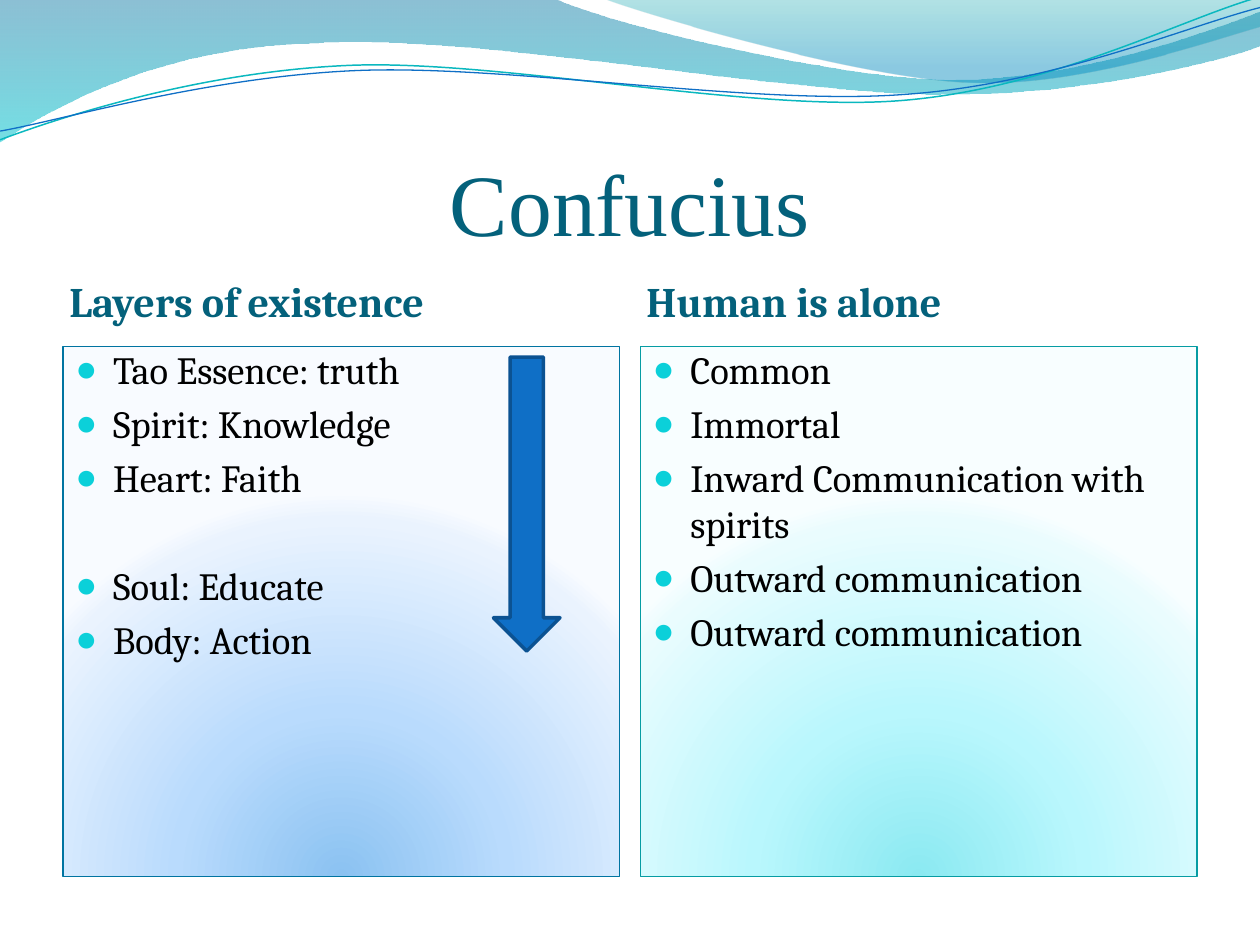
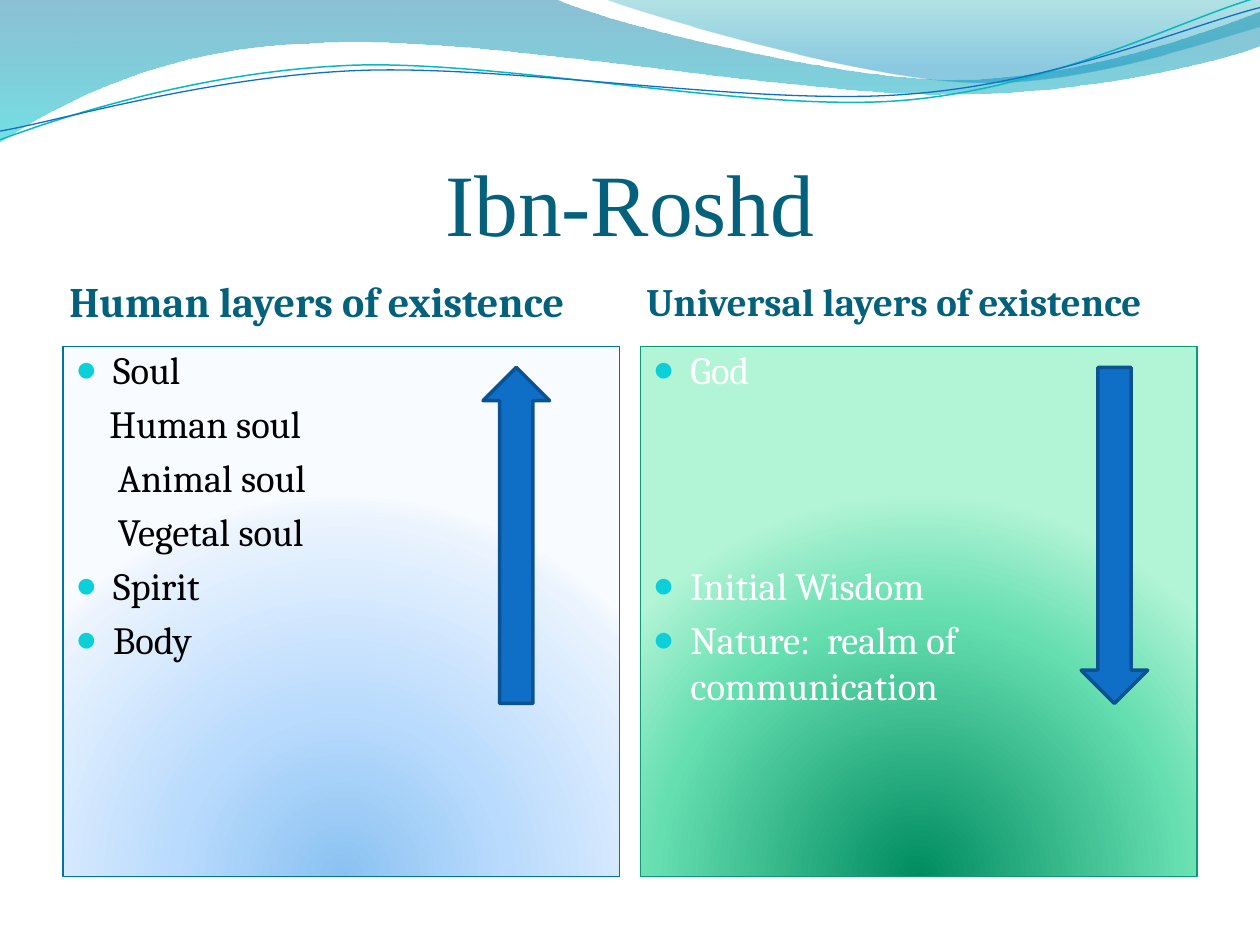
from dataclasses import dataclass
from typing import NamedTuple

from lxml.etree import SubElement
from pptx import Presentation
from pptx.dml.color import RGBColor
from pptx.enum.shapes import MSO_SHAPE
from pptx.enum.text import MSO_ANCHOR, PP_ALIGN
from pptx.oxml.ns import qn
from pptx.util import Pt


@dataclass(frozen=True)
class Theme:
    title_font: str = "Times New Roman"
    font: str = "Cambria"
    ink: str = "04617B"
    black: str = "000000"
    white: str = "FFFFFF"
    bullet: str = "0BD0D9"
    arrow: str = "0F6FC6"
    edge: str = "0B5292"
    title: float = 50
    head: float = 24
    small: float = 22.2
    body: float = 22


class Item(NamedTuple):
    text: str
    skip: int = 0
    inset: float = 0


class Arrow(NamedTuple):
    kind: MSO_SHAPE
    left: float
    top: float
    height: float


class Look(NamedTuple):
    stops: list
    line: str
    ink: str


class Panel(NamedTuple):
    head: str
    size: float
    look: Look
    items: list
    arrow: Arrow = None


T = Theme()
BLUE = Look([(0, "8BC2F1"), (43, "B9DBFD"), (93, "EAF3FE"), (100, "F8FBFF")], "0074A1", T.black)
AQUA = Look([(0, "8BE9F1"), (43, "B9F7FD"), (93, "EAFCFE"), (100, "F8FEFF")], "069CA3", T.black)
GREEN = Look([(0, "008C60"), (68, "65DEB0"), (100, "B2F4D6")], "0A9B74", T.white)

SLIDES = [
    ("Confucius", [
        Panel("Layers of existence", T.head, BLUE, [
            Item("Tao Essence: truth"),
            Item("Spirit: Knowledge"),
            Item("Heart: Faith"),
            Item("Soul: Educate", skip=1),
            Item("Body: Action"),
        ], Arrow(MSO_SHAPE.DOWN_ARROW, 246, 6, 168)),
        Panel("Human is alone", T.head, AQUA, [
            Item("Common"),
            Item("Immortal"),
            Item("Inward Communication with spirits"),
            Item("Outward communication"),
            Item("Outward communication"),
        ]),
    ]),
    ("Ibn-Roshd", [
        Panel("Human layers of existence", T.head, BLUE, [
            Item("Soul"),
            Item("Human soul", inset=19.4),
            Item("Animal soul", inset=24.2),
            Item("Vegetal soul", inset=24.2),
            Item("Spirit"),
            Item("Body"),
        ], Arrow(MSO_SHAPE.UP_ARROW, 240, 12, 192)),
        Panel("Universal layers of existence", T.small, GREEN, [
            Item("God"),
            Item("Initial Wisdom", skip=3),
            Item("Nature:  realm of communication"),
        ], Arrow(MSO_SHAPE.DOWN_ARROW, 252, 12, 192)),
    ]),
]

BANDS = [
    ([(0, "0074A1", 45), (100, "00C6CF", 55)], [
        (-0.7, 0), (317, -0.7),
        (342.7, 12.2, 478.1, 45.4, 545.8, 45.4),
        (614.2, 45.4, 689.8, 18.7, 720, 6.5),
        (720.7, 25.9),
        (707.8, 31.7, 626.4, 54.7, 537.1, 54),
        (447.8, 54, 275, 20.2, 185, 24.5),
        (92.9, 25.9, 33.1, 59.8, -0.7, 81.4),
    ]),
    ([(0, "00A1A9", 30), (80, "008BBF", 45)], [
        (344.9, -0.7),
        (366.5, 7.9, 491, 44.6, 553.7, 46.8),
        (616.3, 49.7, 691.9, 23, 720, 15.1),
        (720, 0),
    ]),
]
CURVES = [
    ("0AB8BF", 0.85, [
        (0, 79.9),
        (34.6, 67, 113.8, 41, 199.4, 37.4),
        (284.4, 33.8, 427, 64.1, 513.4, 57.6),
        (599.8, 51.1, 675.4, 10.8, 718.6, -1.4),
    ]),
    (T.arrow, 0.75, [
        (0, 74.9),
        (33.8, 69.1, 118.1, 43.9, 203.8, 40.3),
        (290.2, 36.7, 429.8, 60.5, 516.2, 54),
        (601.9, 48.2, 677.5, 15.1, 720, 4.3),
    ]),
]

WIDE, HIGH, EDGE = 720, 540, 36
COL, HEAD_TOP, TOP, TALL = 318.2, 146, 198, 303
ROW, GAP, HANG = 30.8, 4.4, 21.6


def color(code):
    return RGBColor.from_string(code)


def box(left, top, width, height):
    return [Pt(n) for n in (left, top, width, height)]


def stroke(shape, code, width):
    shape.shadow.inherit = False
    shape.line.color.rgb = color(code)
    shape.line.width = Pt(width)


def blend(shape, stops, round_fill=False):
    shape.fill.gradient()
    grad = shape.element.spPr.find(qn("a:gradFill"))
    for child in list(grad):
        grad.remove(child)
    group = SubElement(grad, qn("a:gsLst"))
    for pos, code, *alpha in stops:
        stop = SubElement(group, qn("a:gs"), pos=str(pos * 1000))
        tint = SubElement(stop, qn("a:srgbClr"), val=code)
        for part in alpha:
            SubElement(tint, qn("a:alpha"), val=str(part * 1000))
    if round_fill:
        way = SubElement(grad, qn("a:path"), path="circle")
        SubElement(way, qn("a:fillToRect"), l="50000", t="130000", r="50000", b="-30000")
    else:
        SubElement(grad, qn("a:lin"), ang="5400000", scaled="1")


def outline(slide, parts, close):
    first, *rest = [(Pt(part[-2]), Pt(part[-1])) for part in parts]
    pen = slide.shapes.build_freeform(*first)
    pen.add_line_segments(rest, close=close)
    shape = pen.convert_to_shape()
    for part, step in zip(parts[1:], list(shape.element.iter(qn("a:lnTo")))):
        if len(part) == 6:
            step.tag = qn("a:cubicBezTo")
            for n, (x, y) in enumerate((part[:2], part[2:4])):
                point = SubElement(step, qn("a:pt"), x=str(Pt(x) - shape.left), y=str(Pt(y) - shape.top))
                step.insert(n, point)
    return shape


def add_waves(slide):
    waves = []
    for stops, parts in BANDS:
        band = outline(slide, parts, True)
        band.shadow.inherit = False
        band.line.fill.background()
        blend(band, stops)
        waves.append(band)
    for code, width, parts in CURVES:
        curve = outline(slide, parts, False)
        curve.fill.background()
        stroke(curve, code, width)
        waves.append(curve)
    tree = slide.slide_layout.shapes.element
    for n, wave in enumerate(waves):
        wave.element.nvSpPr.cNvPr.set("id", str(20 + n))
        tree.insert(2 + n, wave.element)


def set_frame(frame, anchor, left, top, right, bottom):
    frame.word_wrap = True
    frame.vertical_anchor = anchor
    frame.margin_left, frame.margin_top = Pt(left), Pt(top)
    frame.margin_right, frame.margin_bottom = Pt(right), Pt(bottom)


def write(para, text, font, size, code, bold=False, align=PP_ALIGN.LEFT):
    para.text = text
    para.alignment = align
    para.font.name, para.font.size, para.font.bold = font, Pt(size), bold
    para.font.color.rgb = color(code)


def add_title(slide, text):
    title = slide.shapes.title
    title.left, title.top, title.width, title.height = box(EDGE, 55, WIDE - 2 * EDGE, 90)
    set_frame(title.text_frame, MSO_ANCHOR.BOTTOM, 0, 3.6, 0, 0)
    write(title.text_frame.paragraphs[0], text, T.title_font, T.title, T.ink, align=PP_ALIGN.CENTER)


def add_items(frame, items, code):
    for n, item in enumerate(items):
        para = frame.add_paragraph() if n else frame.paragraphs[0]
        write(para, item.text, T.font, T.body, code)
        para.space_before = Pt(GAP + item.skip * ROW)
        props = para._p.get_or_add_pPr()
        props.set("marL", str(Pt(item.inset or HANG)))
        if item.inset:
            continue
        props.set("indent", str(-Pt(HANG)))
        tint = SubElement(props, qn("a:buClr"))
        SubElement(tint, qn("a:srgbClr"), val=T.bullet)
        SubElement(props, qn("a:buSzPct"), val="95000")
        SubElement(props, qn("a:buFont"), typeface=T.title_font)
        SubElement(props, qn("a:buChar"), char="●")
        props.append(props.find(qn("a:defRPr")))


def add_panel(slide, panel, left):
    head = slide.shapes.add_textbox(*box(left, HEAD_TOP, COL, TOP - HEAD_TOP)).text_frame
    set_frame(head, MSO_ANCHOR.MIDDLE, 3.6, 0, 3.6, 0)
    write(head.paragraphs[0], panel.head, T.font, panel.size, T.ink, bold=True)

    card = slide.shapes.add_shape(MSO_SHAPE.RECTANGLE, *box(left, TOP, COL, TALL))
    stroke(card, panel.look.line, 0.75)
    blend(card, panel.look.stops, round_fill=True)
    set_frame(card.text_frame, MSO_ANCHOR.TOP, 7.2, 0, 7.2, 3.6)
    add_items(card.text_frame, panel.items, panel.look.ink)

    if panel.arrow:
        kind, shift, drop, height = panel.arrow
        arrow = slide.shapes.add_shape(kind, *box(left + shift, TOP + drop, 38, height))
        stroke(arrow, T.edge, 2)
        arrow.fill.solid()
        arrow.fill.fore_color.rgb = color(T.arrow)


def main():
    deck = Presentation()
    deck.slide_width, deck.slide_height = Pt(WIDE), Pt(HIGH)
    for n, (title, panels) in enumerate(SLIDES):
        slide = deck.slides.add_slide(deck.slide_layouts[5])
        if n == 0:
            add_waves(slide)
        add_title(slide, title)
        for left, panel in zip((EDGE, WIDE - EDGE - COL), panels):
            add_panel(slide, panel, left)
    deck.save("out.pptx")


if __name__ == "__main__":
    main()
